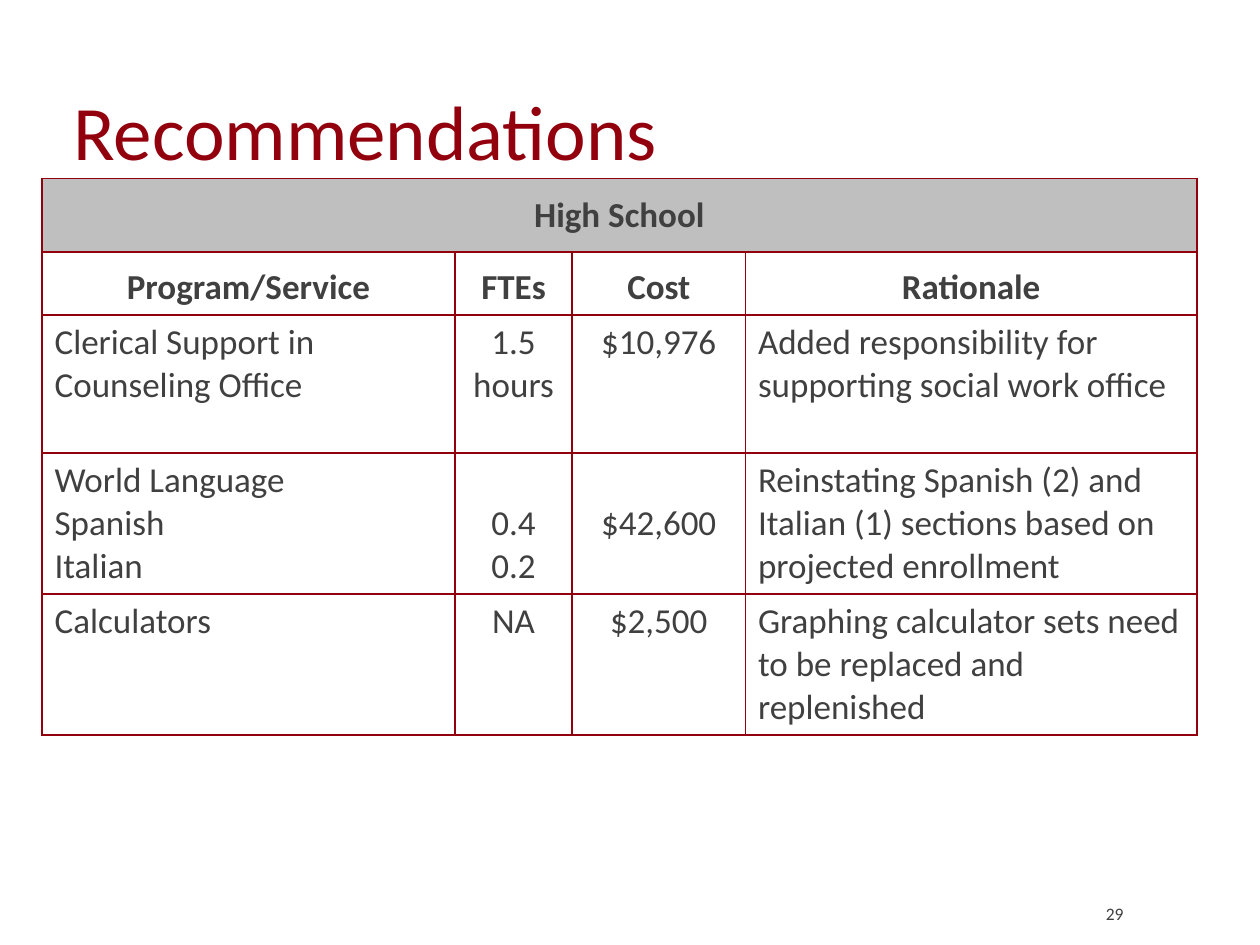
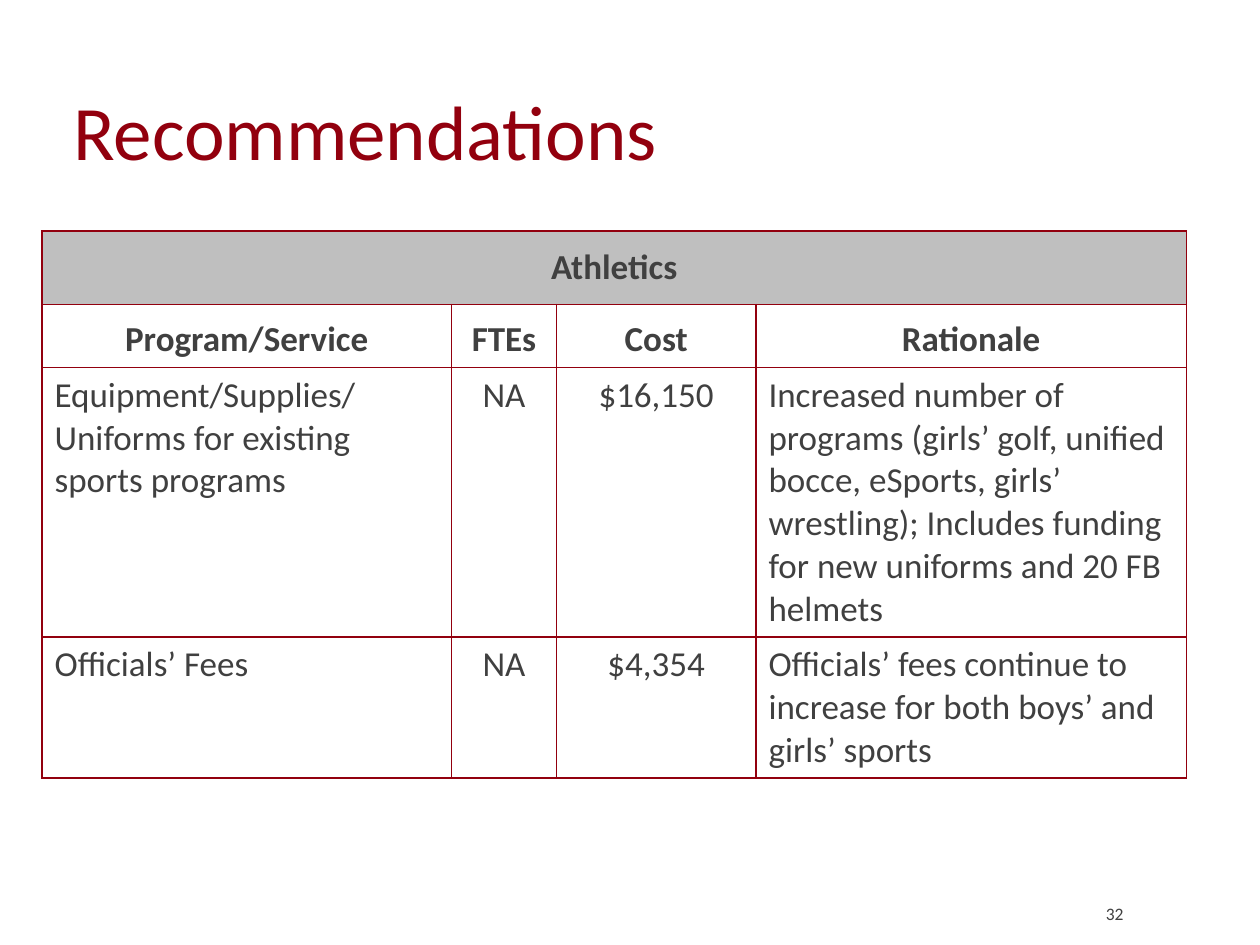
from dataclasses import dataclass
from pptx import Presentation
from pptx.dml.color import RGBColor as Rgb
from pptx.enum.text import MSO_ANCHOR as Anchor, PP_ALIGN as Align
from pptx.oxml import parse_xml
from pptx.oxml.ns import nsdecls
from pptx.util import Pt


@dataclass(frozen=True)
class Theme:
    """Colours, font and type sizes shared by all slides."""
    font: str = "Calibri"
    red: str = "92000E"
    ink: str = "404040"
    band: str = "BFBFBF"
    head: int = 44
    body: int = 20
    foot: int = 10
    rule: int = 1


THEME = Theme()
SIZE = (720, 540)
TITLE = (42, 54, 648, 78)
FOOT = (606, 498, 36, 30)
LINE = 24.4
INSET = 3.6
HEADS = ["Program/Service", "FTEs", "Cost", "Rationale"]

SLIDES = [
    {
        "page": "29", "box": (24, 102), "group": "High School",
        "cols": [236, 67, 99, 258], "rows": [42, 36, 79, 80.5, 80.5],
        "items": [
            ["Clerical Support in Counseling Office", "1.5 hours", "$10,976",
             "Added responsibility for supporting social work office"],
            ["World Language\nSpanish\nItalian", "0.4\n0.2", "$42,600",
             "Reinstating Spanish (2) and Italian (1) sections based on "
             "projected enrollment"],
            ["Calculators", "NA", "$2,500",
             "Graphing calculator sets need to be replaced and replenished"],
        ],
        "drops": {(1, 1), (1, 2)},
    },
    {
        "page": "32", "box": (24, 132), "group": "Athletics",
        "cols": [234, 60, 114, 246], "rows": [42, 36, 154, 80.5],
        "items": [
            ["Equipment/Supplies/\nUniforms for existing sports programs",
             "NA", "$16,150",
             "Increased number of programs (girls’ golf, unified bocce, "
             "eSports, girls’ wrestling); Includes funding for new uniforms "
             "and 20 FB helmets"],
            ["Officials’ Fees", "NA", "$4,354",
             "Officials’ fees continue to increase for both boys’ and "
             "girls’ sports"],
        ],
        "drops": set(),
    },
]


def write(frame, text, size, ink, align=Align.LEFT, bold=False, space=None):
    """Write each line of the text as a paragraph with one run."""
    frame.word_wrap = True
    for i, line in enumerate(text.split("\n")):
        para = frame.paragraphs[0] if i == 0 else frame.add_paragraph()
        para.alignment = align
        if space:
            para.line_spacing = space
        run = para.add_run()
        run.text = line
        run.font.name = THEME.font
        run.font.size = Pt(size)
        run.font.bold = bold
        run.font.color.rgb = Rgb.from_string(ink)


def label(slide, box, text, size, ink, anchor=Anchor.TOP, **style):
    """Place a text box without insets."""
    frame = slide.shapes.add_textbox(*map(Pt, box)).text_frame
    frame.margin_left = frame.margin_right = 0
    frame.margin_top = frame.margin_bottom = 0
    frame.vertical_anchor = anchor
    write(frame, text, size, ink, **style)


def border(cell):
    """Draw a red line on all four sides of a cell."""
    props = cell._tc.get_or_add_tcPr()
    for side in "LRTB":
        props.append(parse_xml(
            f'<a:ln{side} {nsdecls("a")} w="{Pt(THEME.rule)}"><a:solidFill>'
            f'<a:srgbClr val="{THEME.red}"/></a:solidFill></a:ln{side}>'))


def entry(cell, text, align=Align.CENTER, anchor=Anchor.TOP, bold=False):
    """Write the text of one table cell."""
    cell.vertical_anchor = anchor
    write(cell.text_frame, text, THEME.body, THEME.ink, align, bold)


def grid(slide, box, data):
    """Place the table of items with its band and heads at the box."""
    cols, rows = data["cols"], data["rows"]
    place = (*box, sum(cols), sum(rows))
    table = slide.shapes.add_table(
        len(rows), len(cols), *map(Pt, place)).table
    table.first_row = table.horz_banding = False
    for col, width in zip(table.columns, cols):
        col.width = Pt(width)
    for row, height in zip(table.rows, rows):
        row.height = Pt(height)
    for cell in table.iter_cells():
        border(cell)
        cell.fill.background()

    band = table.cell(0, 0)
    band.merge(table.cell(0, len(cols) - 1))
    band.fill.solid()
    band.fill.fore_color.rgb = Rgb.from_string(THEME.band)
    entry(band, data["group"], anchor=Anchor.MIDDLE, bold=True)
    for c, head in enumerate(HEADS):
        entry(table.cell(1, c), head, anchor=Anchor.BOTTOM, bold=True)

    for r, item in enumerate(data["items"]):
        for c, text in enumerate(item):
            cell = table.cell(r + 2, c)
            if (r, c) in data["drops"]:
                cell.margin_top = Pt(INSET + LINE)
            entry(cell, text, Align.CENTER if c in (1, 2) else Align.LEFT)


def page(deck, data):
    """Build one slide with title, table and page number."""
    slide = deck.slides.add_slide(deck.slide_layouts[6])
    label(slide, TITLE, "Recommendations", THEME.head, THEME.red, space=0.9)
    grid(slide, data["box"], data)
    label(slide, FOOT, data["page"], THEME.foot, THEME.ink, Anchor.BOTTOM,
          align=Align.RIGHT)


def main():
    """Build and save the deck."""
    deck = Presentation()
    deck.slide_width, deck.slide_height = map(Pt, SIZE)
    for data in SLIDES:
        page(deck, data)
    deck.save("out.pptx")


if __name__ == "__main__":
    main()
